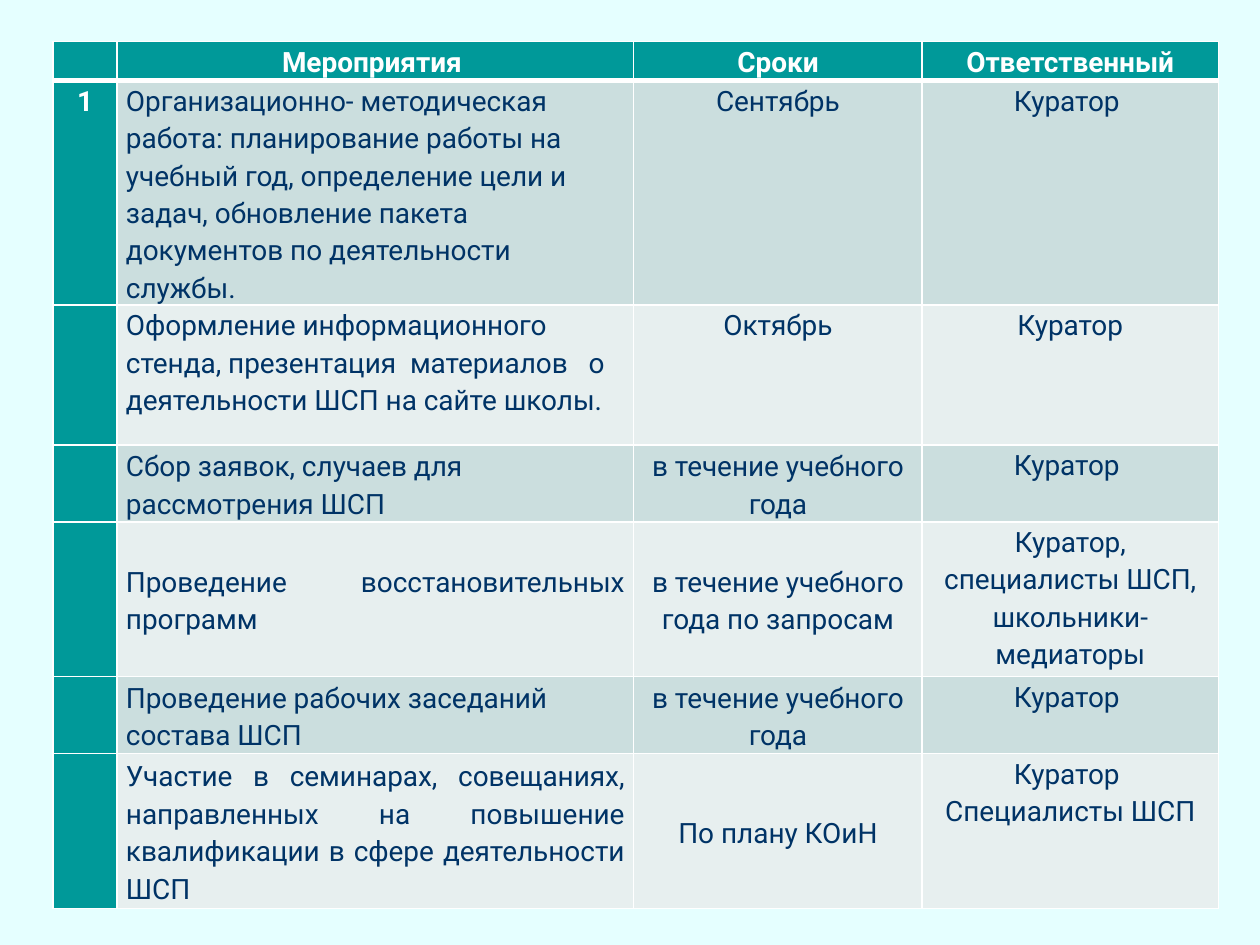
from dataclasses import dataclass

from lxml.etree import SubElement
from pptx import Presentation
from pptx.dml.color import RGBColor
from pptx.enum.text import MSO_ANCHOR, PP_ALIGN
from pptx.oxml.ns import qn
from pptx.util import Inches, Pt


@dataclass(frozen=True)
class Theme:
    background: str = "E5FFFF"
    accent: str = "009999"
    bands: tuple = ("CBDEDE", "E7EFEF")
    text: str = "003366"
    white: str = "FFFFFF"
    font: str = "Roboto"
    size: int = 16
    leading: float = 1.15
    inset: float = 0.07
    rule: int = 1
    header_rule: int = 3


THEME = Theme()
WIDTH, HEIGHT = 10, 7.5
COLUMNS = (0.51, 4.1, 2.29, 2.35)
ROWS = (0.31, 1.67, 1.11, 0.61, 1.23, 0.61, 1.23)

LEFT, CENTER, JUSTIFY = PP_ALIGN.LEFT, PP_ALIGN.CENTER, PP_ALIGN.JUSTIFY
TOP, MIDDLE = MSO_ANCHOR.TOP, MSO_ANCHOR.MIDDLE

HEADER = ("", "Мероприятия ", "Сроки", "Ответственный")
# number, activity, dates, person; activity alignment, anchor and space after
PLAN = (
    (("1", "Организационно- методическая работа: планирование работы на учебный год, "
      "определение цели и задач, обновление пакета документов по деятельности службы.",
      "Сентябрь", "Куратор "), LEFT, TOP, 0),
    (("", "Оформление информационного стенда, презентация  материалов   о "
      "деятельности ШСП на сайте школы.", "Октябрь", "Куратор"), LEFT, TOP, 0),
    (("", "Сбор заявок, случаев для рассмотрения ШСП",
      "в течение учебного года", "Куратор "), LEFT, MIDDLE, 1),
    (("", "Проведение восстановительных программ", "в течение учебного года по запросам",
      "Куратор, специалисты ШСП, школьники-медиаторы"), JUSTIFY, MIDDLE, 0),
    (("", "Проведение рабочих заседаний состава ШСП",
      "в течение учебного года", "Куратор "), LEFT, MIDDLE, 1),
    (("", "Участие в семинарах, совещаниях, направленных на повышение квалификации "
      "в сфере деятельности ШСП", "По плану КОиН",
      "Куратор \nСпециалисты ШСП"), JUSTIFY, MIDDLE, 1),
)


def write(tf, text, color=THEME.text, bold=False, align=CENTER, after=0):
    for i, line in enumerate(text.split("\n")):
        p = tf.add_paragraph() if i else tf.paragraphs[0]
        p.alignment = align
        p.line_spacing = THEME.leading
        p.space_after = Pt(after)
        p.font.size = Pt(THEME.size)
        if line:
            r = p.add_run()
            r.text = line
            r.font.name = THEME.font
            r.font.size = Pt(THEME.size)
            r.font.bold = bold
            r.font.color.rgb = RGBColor.from_string(color)


def style_cell(cell, fill, top, bottom, anchor=TOP):
    """Set insets, borders and then the fill, in the order the schema asks for."""
    cell.margin_left = cell.margin_right = Inches(THEME.inset)
    cell.margin_top = cell.margin_bottom = 0
    cell.vertical_anchor = anchor
    tcPr = cell._tc.get_or_add_tcPr()
    rule = THEME.rule
    for side, width in (("L", rule), ("R", rule), ("T", top), ("B", bottom)):
        ln = SubElement(tcPr, qn(f"a:ln{side}"), w=str(Pt(width)))
        SubElement(SubElement(ln, qn("a:solidFill")), qn("a:srgbClr"), val=THEME.white)
    cell.fill.solid()
    cell.fill.fore_color.rgb = RGBColor.from_string(fill)


def header_row(tbl):
    for cell, text in zip(tbl.rows[0].cells, HEADER):
        style_cell(cell, THEME.accent, THEME.rule, THEME.header_rule)
        write(cell.text_frame, text, color=THEME.white, bold=True)


def plan_row(tbl, row, texts, align, anchor, after):
    top = THEME.header_rule if row == 1 else THEME.rule
    band = THEME.bands[(row - 1) % 2]
    for col, (cell, text) in enumerate(zip(tbl.rows[row].cells, texts)):
        number, content = col == 0, col in (1, 2)
        style_cell(cell, THEME.accent if number else band, top, THEME.rule,
                   anchor if content else TOP)
        write(cell.text_frame, text,
              color=THEME.white if number else THEME.text, bold=number,
              align=align if col == 1 else CENTER, after=after if content else 0)


def plan_table(s, left, top, width, height):
    """Share the box among columns and rows and fill in the plan."""
    tbl = s.shapes.add_table(len(ROWS), len(COLUMNS), Inches(left), Inches(top),
                             Inches(width), Inches(height)).table
    for column, share in zip(tbl.columns, COLUMNS):
        column.width = Inches(width * share / sum(COLUMNS))
    for row, share in zip(tbl.rows, ROWS):
        row.height = Inches(height * share / sum(ROWS))
    header_row(tbl)
    for row, entry in enumerate(PLAN, 1):
        plan_row(tbl, row, *entry)


def main():
    prs = Presentation()
    prs.slide_width, prs.slide_height = Inches(WIDTH), Inches(HEIGHT)
    s = prs.slides.add_slide(prs.slide_layouts[6])
    s.background.fill.solid()
    s.background.fill.fore_color.rgb = RGBColor.from_string(THEME.background)
    plan_table(s, 0.042 * WIDTH, 0.044 * HEIGHT, sum(COLUMNS), sum(ROWS))
    prs.save("out.pptx")


if __name__ == "__main__":
    main()
